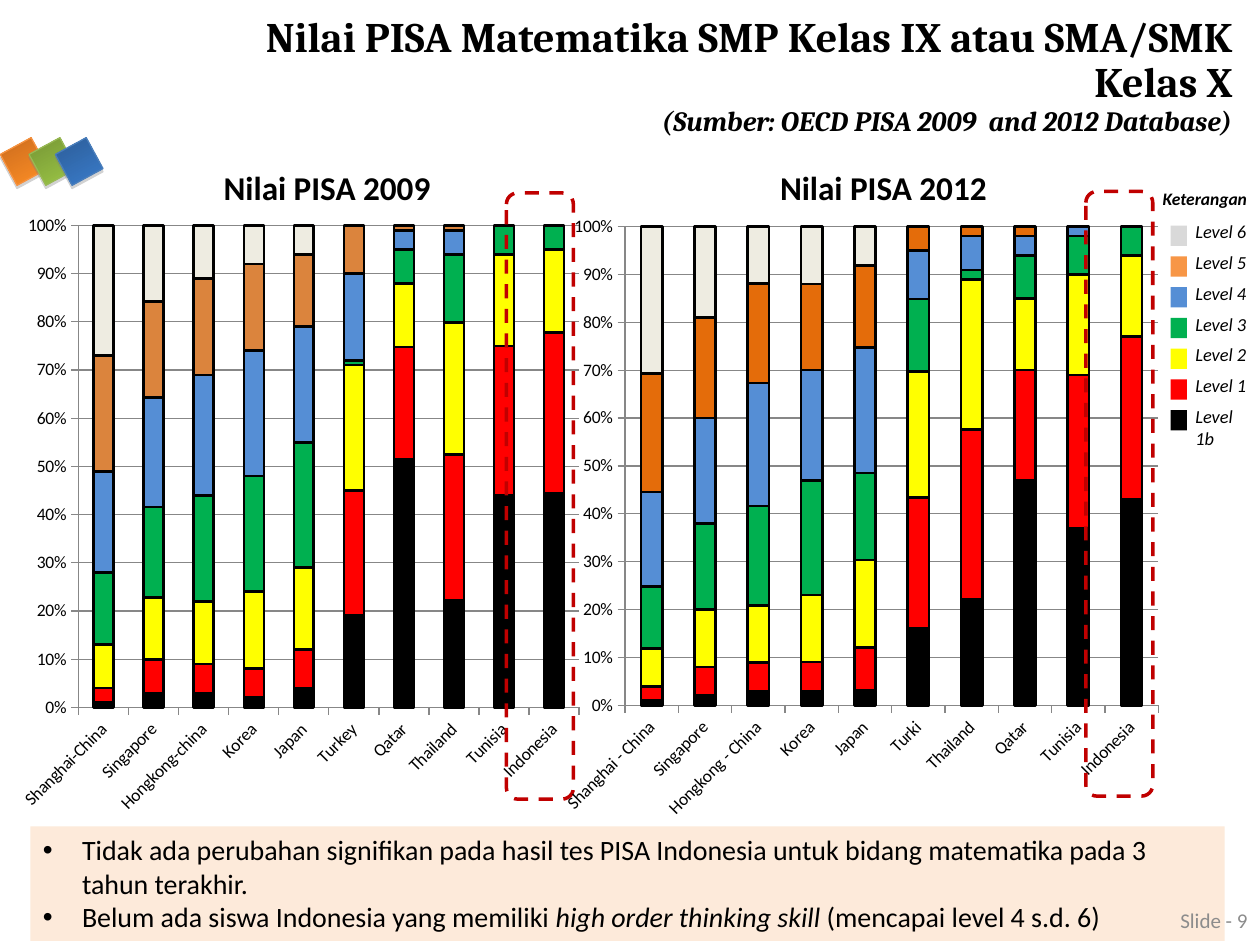
from lxml import etree
from pptx import Presentation
from pptx.chart.data import CategoryChartData
from pptx.dml.color import RGBColor
from pptx.enum import chart as charts, dml, shapes, text
from pptx.oxml import parse_xml
from pptx.oxml.ns import nsdecls, qn
from pptx.util import Cm, Pt

COLORS = {
    "black": "000000", "red": "FF0000", "yellow": "FFFF00", "green": "00B050",
    "blue": "558ED5", "orange": "F79646", "gray": "D9D9D9", "cream": "EEECE1",
    "orange 2009": "DB843D", "orange 2012": "E46C0A", "frame": "C00000",
    "peach": "FDEADA", "grid": "878787", "number": "8C8C8C",
}


def style_run(paragraph, words, size, color="black", bold=False, italic=False, name="Calibri"):
    run = paragraph.add_run()
    run.text = words
    font = run.font
    font.name, font.size, font.bold, font.italic = name, Pt(size), bold, italic
    font.color.rgb = RGBColor.from_string(COLORS[color])


def add_label(box, words, size, align=text.PP_ALIGN.LEFT, **style):
    frame = slide.shapes.add_textbox(*map(Cm, box)).text_frame
    frame.word_wrap = True
    frame.paragraphs[0].alignment = align
    style_run(frame.paragraphs[0], words, size, **style)
    return frame


presentation = Presentation()
presentation.slide_width, presentation.slide_height = Cm(25.4), Cm(19.05)
slide = presentation.slides.add_slide(presentation.slide_layouts[1])
title, body = slide.placeholders

# Title and source
title.left, title.top, title.width, title.height = map(Cm, (4.09, 0.2, 21.01, 2.34))
frame = title.text_frame
frame.auto_size = text.MSO_AUTO_SIZE.NONE
frame.vertical_anchor = text.MSO_ANCHOR.TOP
paragraph = frame.paragraphs[0]
paragraph.alignment = text.PP_ALIGN.RIGHT
paragraph.line_spacing = 0.9
style_run(paragraph, "Nilai PISA Matematika SMP Kelas IX atau SMA/SMK Kelas X", 24,
          bold=True, name="Cambria")
paragraph.add_line_break()
style_run(paragraph, "(Sumber: OECD PISA 2009  and 2012 Database)", 16,
          bold=True, italic=True, name="Cambria")

# Conclusions
body.left, body.top, body.width, body.height = map(Cm, (0.61, 16.66, 24.08, 2.31))
body.fill.solid()
body.fill.fore_color.rgb = RGBColor.from_string(COLORS["peach"])
frame = body.text_frame
frame.auto_size = text.MSO_AUTO_SIZE.NONE
conclusions = [
    [("Tidak ada perubahan signifikan pada hasil tes PISA Indonesia untuk bidang "
      "matematika pada 3 tahun terakhir.", False)],
    [("Belum ada siswa Indonesia yang memiliki ", False),
     ("high order thinking skill ", True),
     ("(mencapai level 4 s.d. 6)", False)],
]
for index, runs in enumerate(conclusions):
    paragraph = frame.add_paragraph() if index else frame.paragraphs[0]
    paragraph.space_before = Pt(0)
    properties = paragraph._p.get_or_add_pPr()
    properties.set("marL", str(Cm(0.79)))
    properties.set("indent", str(Cm(-0.79)))
    etree.SubElement(properties, qn("a:buFont")).set("typeface", "Arial")
    etree.SubElement(properties, qn("a:buChar")).set("char", "•")
    for words, italic in runs:
        style_run(paragraph, words, 16, italic=italic)

# Three tilted squares
for left, light, dark, outline in [
    (0.13, "FF8F26", "CB6C1D", "F69240"),
    (0.71, "9CC746", "769535", "98B954"),
    (1.24, "3A7CCB", "2C5D98", "4A7EBB"),
]:
    square = slide.shapes.add_shape(shapes.MSO_SHAPE.RECTANGLE, Cm(left), Cm(2.9), Cm(0.71), Cm(0.71))
    square.rotation = 151.5
    square.fill.gradient()
    square.fill.gradient_angle = 270
    for stop, color in zip(square.fill.gradient_stops, (light, dark)):
        stop.color.rgb = RGBColor.from_string(color)
    square.line.color.rgb = RGBColor.from_string(outline)
    square.line.width = Pt(0.75)
    square.shadow.inherit = False
    square._element.spPr.find(qn("a:effectLst")).append(parse_xml(
        f'<a:outerShdw {nsdecls("a")} dist="22860" dir="5400000" rotWithShape="0">'
        '<a:srgbClr val="808080"><a:alpha val="35000"/></a:srgbClr></a:outerShdw>'))

# Charts: one row of values per level, from 1b up to 6
scores = [
    {"title": "Nilai PISA 2009", "title box": (3.51, 3.25, 6.17, 1.07),
     "box": (0.18, 4.04, 11.73, 12.62), "plot height": 0.77, "orange": "orange 2009",
     "frame": (10.21, 3.89, 1.35, 12.22),
     "countries": ["Shanghai-China", "Singapore", "Hongkong-china", "Korea", "Japan",
                   "Turkey", "Qatar", "Thailand", "Tunisia", "Indonesia"],
     "levels": [[1, 3, 3, 2, 4, 19, 51, 22, 44, 44],
                [3, 7, 6, 6, 8, 26, 23, 30, 31, 33],
                [9, 13, 13, 16, 17, 26, 13, 27, 19, 17],
                [15, 19, 22, 24, 26, 1, 7, 14, 6, 5],
                [21, 23, 25, 26, 24, 18, 4, 5, 0, 0],
                [24, 20, 20, 18, 15, 10, 1, 1, 0, 0],
                [27, 16, 11, 8, 6, 0, 0, 0, 0, 0]]},
    {"title": "Nilai PISA 2012", "title box": (15.09, 3.25, 5.44, 1.07),
     "box": (11.1, 4.06, 12.5, 12.7), "plot height": 0.76, "orange": "orange 2012",
     "frame": (21.89, 3.86, 1.35, 12.19),
     "countries": ["Shanghai - China", "Singapore", "Hongkong - China", "Korea", "Japan",
                   "Turki", "Thailand", "Qatar", "Tunisia", "Indonesia"],
     "levels": [[1, 2, 3, 3, 3, 16, 22, 47, 37, 43],
                [3, 6, 6, 6, 9, 27, 35, 23, 32, 34],
                [8, 12, 12, 14, 18, 26, 31, 15, 21, 17],
                [13, 18, 21, 24, 18, 15, 2, 9, 8, 6],
                [20, 22, 26, 23, 26, 10, 7, 4, 2, 0],
                [25, 21, 21, 18, 17, 5, 2, 2, 0, 0],
                [31, 19, 12, 12, 8, 0, 0, 0, 0, 0]]},
]
for score in scores:
    add_label(score["title box"], score["title"], 19, text.PP_ALIGN.CENTER, bold=True)
    data = CategoryChartData()
    data.categories = score["countries"]
    for number, values in enumerate(score["levels"], 1):
        data.add_series(f"Series {number}", values)
    chart = slide.shapes.add_chart(charts.XL_CHART_TYPE.COLUMN_STACKED_100,
                                   *map(Cm, score["box"]), data).chart
    chart.has_legend = chart.has_title = False
    chart.font.name, chart.font.size = "Calibri", Pt(10)
    chart.font.color.rgb = RGBColor.from_string(COLORS["black"])

    plot = chart.plots[0]
    plot.gap_width, plot.overlap, plot.vary_by_categories = 150, 100, False
    fills = ["black", "red", "yellow", "green", "blue", score["orange"], "cream"]
    for series, color in zip(plot.series, fills):
        series.format.fill.solid()
        series.format.fill.fore_color.rgb = RGBColor.from_string(COLORS[color])
        series.format.line.color.rgb = RGBColor.from_string(COLORS["black"])
        series.format.line.width = Pt(1.5)

    chart.value_axis.tick_labels.number_format = "0%"
    chart.value_axis.tick_labels.number_format_is_linked = False
    chart.value_axis.has_major_gridlines = True
    for part in (chart.value_axis, chart.category_axis, chart.value_axis.major_gridlines):
        part.format.line.color.rgb = RGBColor.from_string(COLORS["grid"])
        part.format.line.width = Pt(0.75)
    chart.category_axis.tick_labels.font.size = Pt(10)
    chart.category_axis._element.find(qn("c:txPr")).find(qn("a:bodyPr")).set("rot", "-2700000")

    plot_area = chart._chartSpace.chart.plotArea
    for layout in plot_area.findall(qn("c:layout")):
        plot_area.remove(layout)
    layout = etree.Element(qn("c:layout"))
    manual = etree.SubElement(layout, qn("c:manualLayout"))
    for tag, value in [("layoutTarget", "inner"), ("xMode", "edge"), ("yMode", "edge"),
                       ("x", 0.12), ("y", 0.04), ("w", 0.86), ("h", score["plot height"])]:
        etree.SubElement(manual, qn(f"c:{tag}")).set("val", str(value))
    plot_area.insert(0, layout)

    # Dashed frame around Indonesia
    highlight = slide.shapes.add_shape(shapes.MSO_SHAPE.ROUNDED_RECTANGLE, *map(Cm, score["frame"]))
    highlight.fill.background()
    highlight.line.color.rgb = RGBColor.from_string(COLORS["frame"])
    highlight.line.width = Pt(2)
    highlight.line.dash_style = dml.MSO_LINE.DASH
    highlight.shadow.inherit = False

# Legend
add_label((23.19, 3.66, 2.49, 0.69), "Keterangan", 10, bold=True, italic=True)
legend = zip(["6", "5", "4", "3", "2", "1", "1b"],
             ["gray", "orange", "blue", "green", "yellow", "red", "black"])
for row, (level, color) in enumerate(legend):
    offset = row * 0.62
    swatch = slide.shapes.add_shape(shapes.MSO_SHAPE.RECTANGLE,
                                    Cm(23.6), Cm(4.55 + offset), Cm(0.33), Cm(0.41))
    swatch.fill.solid()
    swatch.fill.fore_color.rgb = RGBColor.from_string(COLORS[color])
    swatch.line.fill.background()
    swatch.shadow.inherit = False
    add_label((23.85, 4.32 + offset, 1.65, 0.74), f"Level {level}", 10.5, italic=True)

# Slide number
frame = add_label((19.48, 18.03, 5.92, 1.02), "Slide - 9", 12, text.PP_ALIGN.RIGHT, color="number")
frame.vertical_anchor = text.MSO_ANCHOR.MIDDLE
frame.margin_right = Cm(0.25)

presentation.save("out.pptx")
